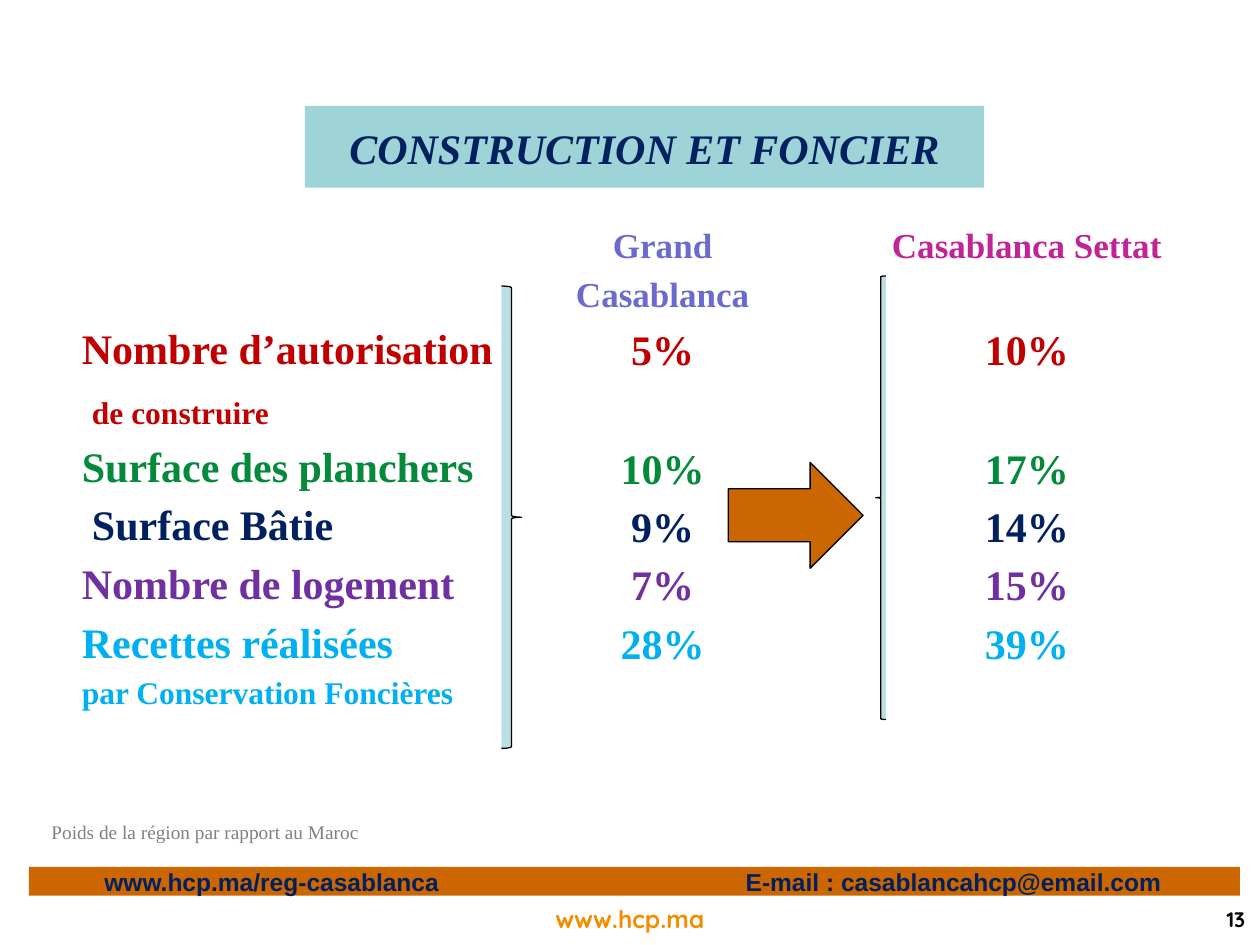
from pptx import Presentation
from pptx.dml.color import RGBColor
from pptx.enum.shapes import MSO_SHAPE
from pptx.enum.text import MSO_ANCHOR, MSO_AUTO_SIZE, PP_ALIGN
from pptx.oxml.ns import qn
from pptx.util import Inches, Pt
from lxml.etree import SubElement

THEME = {
    "serif": "Times New Roman", "sans": "Arial", "round": "Quicksand",
    "navy": "002060", "teal": "9ED3D7", "pale": "BBE0E3", "rust": "CC6600",
    "red": "C00000", "green": "048A3A", "purple": "7030A0", "sky": "00B0F0",
    "violet": "6B6BCF", "pink": "C22495", "amber": "F18E00",
    "gray": "808080", "black": "000000",
    "big": 24, "head": 20, "sub": 18, "foot": 14, "page": 12, "note": 11,
}
TITLE = "CONSTRUCTION ET FONCIER"
NOTE = "Poids de la région par rapport au Maroc"
SITE = "www.hcp.ma"
LINKS = [(0.73, "www.hcp.ma/reg-casablanca"),
         (5.82, "E-mail : casablancahcp@email.com")]
# text, size, colour, space before, indent
LABELS = [
    ("Nombre d’autorisation", "big", "red", 0, 0),
    ("de construire", "sub", "red", 11.2, 0.08),
    ("Surface des planchers", "big", "green", 5.6, 0),
    ("Surface Bâtie", "big", "navy", 4.8, 0.08),
    ("Nombre de logement", "big", "purple", 4.8, 0),
    ("Recettes réalisées", "big", "sky", 4.8, 0),
    ("par Conservation Foncières", "sub", "sky", 3.6, 0),
]
HEADS = [
    (0, 1.94, "Grand", "violet"),
    (0, 2.33, "Casablanca", "violet"),
    (1, 1.94, "Casablanca Settat", "pink"),
]
VALUES = [
    (2.77, "red", ["5%", "10%"]),
    (3.71, "green", ["10%", "17%"]),
    (4.17, "navy", ["9%", "14%"]),
    (4.63, "purple", ["7%", "15%"]),
    (5.1, "sky", ["28%", "39%"]),
]
CENTERS = [5.26, 8.15]
CELL_W, CELL_H = 2.6, 0.5
SHAPES = [
    (MSO_SHAPE.RIGHT_ARROW, (5.78, 3.67, 1.07, 0.84), "rust"),
    (MSO_SHAPE.RIGHT_BRACE, (3.98, 2.27, 0.16, 3.67), "pale"),
    (MSO_SHAPE.LEFT_BRACE, (6.95, 2.19, 0.08, 3.52), "pale"),
]


def color(name):
    return RGBColor.from_string(THEME[name])


def place(shape, box):
    shape.left, shape.top, shape.width, shape.height = map(Inches, box)


def paint(shape, fill):
    shape.fill.solid()
    shape.fill.fore_color.rgb = color(fill)


def write(para, text, face, size, ink, bold=True, italic=False):
    run = para.add_run()
    run.text = text
    font = run.font
    font.name, font.size = THEME[face], Pt(THEME[size])
    font.bold, font.italic = bold, italic
    font.color.rgb = color(ink)


def add_shape(slide, kind, box, fill):
    shape = slide.shapes.add_shape(kind, *map(Inches, box))
    shape.shadow.inherit = False
    paint(shape, fill)
    return shape


def add_label(slide, box, text, align, style):
    frame = slide.shapes.add_textbox(*map(Inches, box)).text_frame
    frame.word_wrap = True
    frame.vertical_anchor = MSO_ANCHOR.MIDDLE
    para = frame.paragraphs[0]
    para.alignment = align
    write(para, text, *style)


def add_cell(slide, col, mid, text, size, ink):
    box = (CENTERS[col] - CELL_W / 2, mid - CELL_H / 2, CELL_W, CELL_H)
    add_label(slide, box, text, PP_ALIGN.CENTER, ("serif", size, ink))


def add_title(slide):
    title = slide.shapes.title
    place(title, (2.42, 0.84, 5.39, 0.65))
    paint(title, "teal")
    frame = title.text_frame
    frame.auto_size = MSO_AUTO_SIZE.NONE
    frame.vertical_anchor = MSO_ANCHOR.MIDDLE
    frame.margin_top, frame.margin_bottom = Inches(0.05), Inches(0.03)
    para = frame.paragraphs[0]
    para.alignment = PP_ALIGN.CENTER
    write(para, TITLE, "serif", "big", "navy", italic=True)


def add_body(slide):
    body = slide.placeholders[1]
    place(body, (0.55, 2.51, 3.6, 3.58))
    frame = body.text_frame
    frame.auto_size = MSO_AUTO_SIZE.NONE
    for row, (text, size, ink, gap, indent) in enumerate(LABELS):
        para = frame.add_paragraph() if row else frame.paragraphs[0]
        props = para._p.get_or_add_pPr()
        props.set("marL", str(Inches(indent)))
        props.set("indent", "0")
        SubElement(props, qn("a:buNone"))
        para.space_before = Pt(gap)
        write(para, text, "serif", size, ink)


def add_cells(slide):
    for col, mid, text, ink in HEADS:
        add_cell(slide, col, mid, text, "head", ink)
    for mid, ink, texts in VALUES:
        for col, text in enumerate(texts):
            add_cell(slide, col, mid, text, "big", ink)


def add_footer(slide):
    bar = add_shape(slide, MSO_SHAPE.RECTANGLE, (0.23, 6.88, 9.61, 0.23), "rust")
    bar.line.fill.background()
    for left, text in LINKS:
        add_label(slide, (left, 6.83, 3.8, 0.33), text, PP_ALIGN.LEFT,
                  ("sans", "foot", "navy"))
    add_label(slide, (3.82, 7.13, 2.36, 0.33), SITE, PP_ALIGN.CENTER,
              ("round", "foot", "amber"))
    add_label(slide, (8.46, 7.12, 1.52, 0.35), "13", PP_ALIGN.RIGHT,
              ("round", "page", "black"))


def main():
    deck = Presentation()
    deck.slide_width, deck.slide_height = Inches(10), Inches(7.5)
    slide = deck.slides.add_slide(deck.slide_layouts[1])
    add_title(slide)
    add_body(slide)
    add_cells(slide)
    add_footer(slide)
    for kind, box, fill in SHAPES:
        shape = add_shape(slide, kind, box, fill)
        shape.line.color.rgb = color("black")
        shape.line.width = Pt(0.75)
    add_label(slide, (0.31, 6.46, 6.33, 0.29), NOTE, PP_ALIGN.LEFT,
              ("serif", "note", "gray", False))
    deck.save("out.pptx")


if __name__ == "__main__":
    main()
